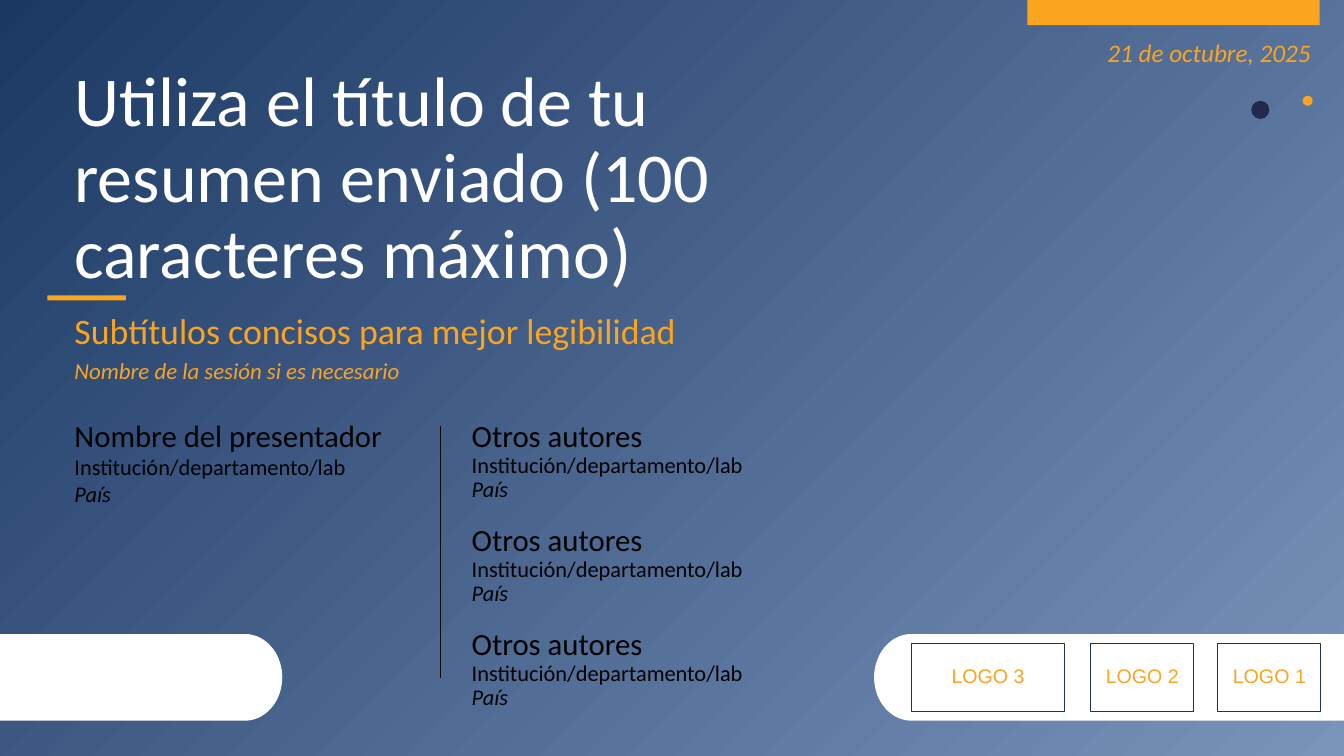
import math

import pptx
import pptx.util
import pptx.dml.color
import pptx.enum.shapes
import pptx.enum.text
import pptx.oxml
from pptx.util import Inches, Pt

COLORS = {
    "navy": "1B3963", "steel": "7993BB", "amber": "FAA41F", "white": "FFFFFF",
    "black": "000000", "frame": "1E3256", "dot": "21294D",
}
RGB = {name: pptx.dml.color.RGBColor.from_string(c) for name, c in COLORS.items()}
ALIGN = pptx.enum.text.PP_ALIGN
SHAPE = pptx.enum.shapes.MSO_SHAPE


def write(tf, lines, color, font="Calibri", align=ALIGN.LEFT, spacing=None):
    """Fill a text frame with (text, size, italic, space before) lines."""
    tf.word_wrap = True
    for i, (text, size, italic, before) in enumerate(lines):
        p = tf.paragraphs[0] if i == 0 else tf.add_paragraph()
        p.text = text
        p.alignment = align
        p.line_spacing = spacing
        p.space_before = Pt(before)
        p.font.name = font
        p.font.size = Pt(size)
        p.font.italic = italic
        p.font.color.rgb = RGB[color]


def paint(sp, fill=None, line=None):
    sp.shadow.inherit = False
    if fill:
        sp.fill.solid()
        sp.fill.fore_color.rgb = RGB[fill]
    else:
        sp.fill.background()
    if line:
        sp.line.color.rgb = RGB[line]
        sp.line.width = Pt(0.75)
    else:
        sp.line.fill.background()


prs = pptx.Presentation()
prs.slide_width, prs.slide_height = Inches(13.33), Inches(7.5)
s = prs.slides.add_slide(prs.slide_layouts[6])

# Background, dark at top left
bg = s.background.fill
bg.gradient()
bg.gradient_angle = 315
for stop, position, color in zip(bg.gradient_stops, (0, 1), ("navy", "steel")):
    stop.position = position
    stop.color.rgb = RGB[color]

# White bands running off the slide edges, each with one rounded end
band_top, band_h, round_w = 6.29, 0.86, 0.37
for edge, tip, side in ((0, 2.8, 1), (13.33, 8.67, -1)):
    middle = band_top + band_h / 2
    arc = []
    for degrees in range(-90, 91, 5):
        a = math.radians(degrees)
        arc.append((Inches(tip - side * round_w * (1 - math.cos(a))),
                    Inches(middle + band_h / 2 * math.sin(a))))
    fb = s.shapes.build_freeform(Inches(edge), Inches(band_top))
    fb.add_line_segments(arc + [(Inches(edge), Inches(band_top + band_h))], close=True)
    paint(fb.convert_to_shape(), "white")

# Accent bars and dots
for kind, x, y, w, h, color in (
    (SHAPE.RECTANGLE, 0.47, 2.93, 0.78, 0.05, "amber"),
    (SHAPE.RECTANGLE, 10.19, 0, 2.9, 0.25, "amber"),
    (SHAPE.OVAL, 12.41, 1, 0.18, 0.18, "dot"),
    (SHAPE.OVAL, 12.92, 0.95, 0.1, 0.1, "amber"),
):
    paint(s.shapes.add_shape(kind, Inches(x), Inches(y), Inches(w), Inches(h)), color)

# Logo frames
for label, x, w in (("LOGO 1", 12.08, 1.02), ("LOGO 2", 10.82, 1.02), ("LOGO 3", 9.04, 1.52)):
    sp = s.shapes.add_shape(SHAPE.RECTANGLE, Inches(x), Inches(6.38), Inches(w), Inches(0.68))
    paint(sp, line="frame")
    write(sp.text_frame, [(label, 14, False, 0)], "amber", "Arial", ALIGN.CENTER, 0.9)
    sp.text_frame.vertical_anchor = pptx.enum.text.MSO_ANCHOR.MIDDLE

# Divider between presenter and co-authors
divider = s.shapes.add_connector(pptx.enum.shapes.MSO_CONNECTOR.STRAIGHT,
                                 Inches(4.37), Inches(4.23), Inches(4.37), Inches(6.73))
divider.line.color.rgb = RGB["black"]
divider.line.width = Pt(1)
divider._element.spPr.append(pptx.oxml.parse_xml(
    '<a:effectLst xmlns:a="http://schemas.openxmlformats.org/drawingml/2006/main"/>'))

# Texts
title = [(line, 50, False, 0) for line in
         ("Utiliza el título de tu", "resumen enviado (100", "caracteres máximo)")]
subtitle = [("Subtítulos concisos para mejor legibilidad", 25.6, False, 10),
            ("Nombre de la sesión si es necesario", 16.3, True, 10)]
affiliation = [("Institución/departamento/lab", 16, False, 0), ("País", 16, True, 0)]
presenter = [("Nombre del presentador", 22, False, 0)] + affiliation
authors = []
for gap in (0, 16, 16):
    authors += [("Otros autores", 22, False, gap)] + affiliation
date = [("21 de octubre, 2025", 18, True, 0)]

for x, y, w, h, lines, color, align, spacing in (
    (0.64, 0.61, 7.94, 2.52, title, "white", ALIGN.LEFT, 0.9),
    (0.64, 3.13, 9.28, 0.75, subtitle, "amber", ALIGN.LEFT, 0.7),
    (0.64, 4.08, 3.62, 1.52, presenter, "black", ALIGN.LEFT, None),
    (4.58, 4.13, 3.62, 3.14, authors, "black", ALIGN.LEFT, 0.9),
    (10.72, 0.32, 2.38, 0.4, date, "amber", ALIGN.RIGHT, None),
):
    tb = s.shapes.add_textbox(Inches(x), Inches(y), Inches(w), Inches(h))
    write(tb.text_frame, lines, color, align=align, spacing=spacing)

prs.save("out.pptx")
